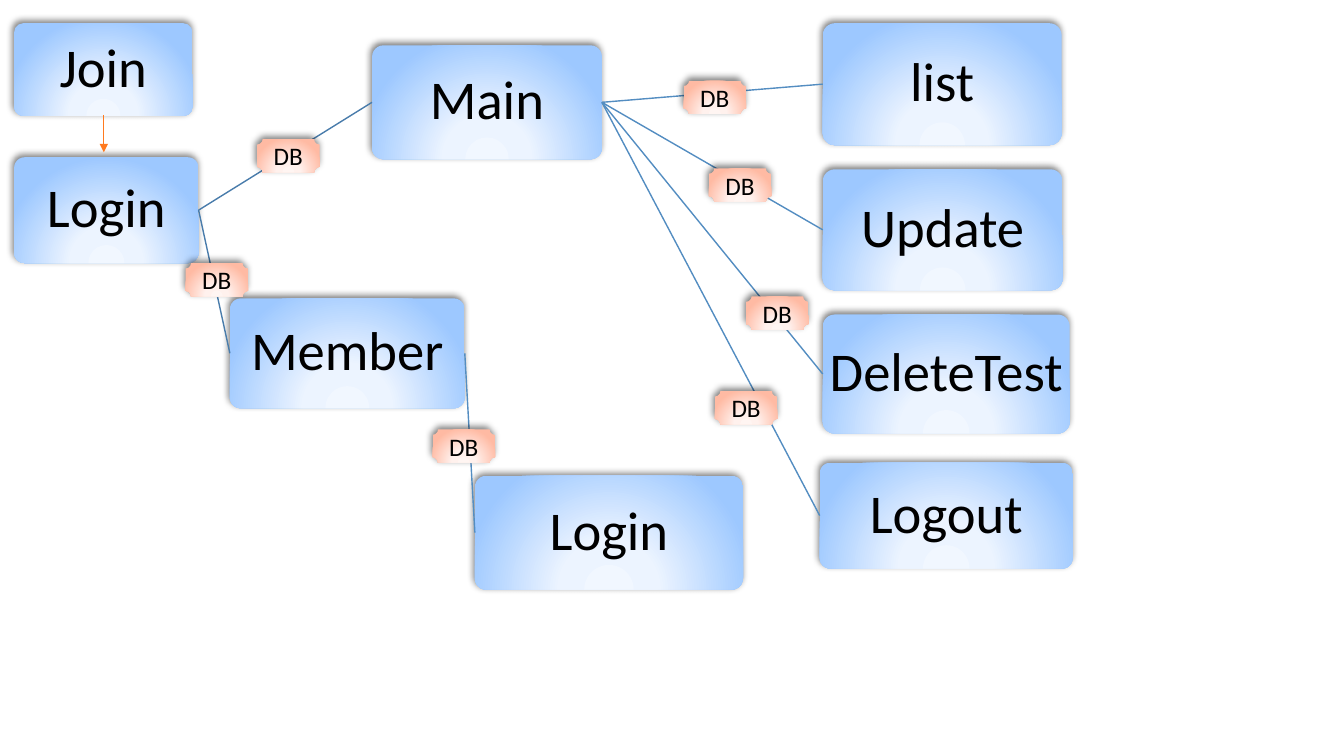
from lxml import etree
from pptx import Presentation
from pptx.dml.color import RGBColor
from pptx.enum.shapes import MSO_CONNECTOR, MSO_SHAPE
from pptx.enum.text import MSO_ANCHOR, PP_ALIGN
from pptx.oxml.ns import qn
from pptx.util import Inches, Pt

ROUND, PLAQUE = MSO_SHAPE.ROUNDED_RECTANGLE, MSO_SHAPE.PLAQUE
STRAIGHT = MSO_CONNECTOR.STRAIGHT
MIDDLE, CENTER = MSO_ANCHOR.MIDDLE, PP_ALIGN.CENTER
LEFT, RIGHT = 1, 3  # connection sites of a box

COLORS = {
    "text": "000000",
    "shade": "000000",
    "dark": "497CAB",
    "link": "538DC1",
    "arrow": "FF7A1F",
}
PAGE = ("F1F7FF", "ECF4FF", "9DC8FF")
STORE = ("FFF5F2", "FFF1ED", "FFBAA3")


def add(parent, tag, **attrs):
    return etree.SubElement(parent, qn(tag), {k: str(v) for k, v in attrs.items()})


def write(shape, text, size=18, font="Calibri", color="text", space=1.0):
    frame = shape.text_frame
    frame.word_wrap = False
    frame.vertical_anchor = MIDDLE
    frame.margin_left = frame.margin_right = 0
    frame.margin_top = frame.margin_bottom = 0
    para = frame.paragraphs[0]
    para.alignment = CENTER
    para.line_spacing = space
    run = para.add_run()
    run.text = text
    run.font.size = Pt(size)
    run.font.name = font
    run.font.color.rgb = RGBColor.from_string(COLORS[color])


class Board:
    def __init__(self, slide):
        self.slide = slide

    def block(self, kind, left, top, width, height, tones):
        """Add a shape with a glow from below and a soft shadow."""
        shape = self.slide.shapes.add_shape(
            kind, Inches(left), Inches(top), Inches(width), Inches(height))
        shape.line.fill.background()
        shape.shadow.inherit = False
        shape.fill.solid()
        props = shape._element.spPr

        # Radial gradient
        grad = etree.Element(qn("a:gradFill"), rotWithShape="1")
        stops = add(grad, "a:gsLst")
        for pos, tone in zip((0, 34, 100), tones):
            stop = add(stops, "a:gs", pos=pos * 1000)
            add(stop, "a:srgbClr", val=tone)
        way = add(grad, "a:path", path="circle")
        add(way, "a:fillToRect", l=50000, t=155000, r=50000, b=-55000)
        props.replace(props.find(qn("a:solidFill")), grad)

        # Soft shadow
        shade = add(props.find(qn("a:effectLst")), "a:outerShdw",
                    blurRad=Pt(5), dist=Pt(2), dir=245 * 60000, rotWithShape=0)
        color = add(shade, "a:srgbClr", val=COLORS["shade"])
        add(color, "a:alpha", val=50000)
        return shape

    def page(self, text, *place):
        shape = self.block(ROUND, *place, PAGE)
        shape.adjustments[0] = 0.1
        write(shape, text, size=39, space=0.9)
        return shape

    def store(self, left, top):
        write(self.block(PLAQUE, left, top, 0.62, 0.33, STORE), "DB")

    def line(self, color, width, start=(0, 0), end=(0, 0)):
        line = self.slide.shapes.add_connector(
            STRAIGHT, *map(Inches, start + end))
        line.line.color.rgb = RGBColor.from_string(COLORS[color])
        line.line.width = Pt(width)
        add(line._element.spPr, "a:effectLst")
        return line

    def link(self, source, target, color):
        line = self.line(color, 1)
        line.begin_connect(source, RIGHT)
        line.end_connect(target, LEFT)

    def arrow(self, start, end):
        line = self.line("arrow", 0.75, start, end)
        add(line.line._get_or_add_ln(), "a:tailEnd", type="triangle")


def main():
    deck = Presentation()
    deck.slide_width, deck.slide_height = Inches(13.33), Inches(7.5)
    board = Board(deck.slides.add_slide(deck.slide_layouts[6]))

    # Pages reached from the login
    login = board.page("Login", 0.14, 1.56, 1.83, 1.05)
    home = board.page("Main", 3.69, 0.45, 2.28, 1.13)
    member = board.page("Member", 2.28, 2.96, 2.33, 1.09)
    for target in (home, member):
        board.link(login, target, "dark")

    # Pages reached from the main page
    for text, *place in (
        ("list", 8.16, 0.23, 2.37, 1.21),
        ("Update", 8.16, 1.68, 2.38, 1.2),
        ("DeleteTest", 8.16, 3.12, 2.45, 1.18),
        ("Logout", 8.13, 4.59, 2.51, 1.05),
    ):
        board.link(home, board.page(text, *place), "link")

    # Second login and joining
    again = board.page("Login", 4.71, 4.72, 2.66, 1.13)
    board.link(member, again, "link")
    board.page("Join", 0.14, 0.23, 1.77, 0.92)
    board.arrow((1.03, 1.14), (1.03, 1.51))

    # Database tags on the links
    for spot in ((1.84, 2.61), (2.55, 1.38), (4.29, 4.26), (7.4, 2.94),
                 (6.78, 0.8), (7.03, 1.67), (7.09, 3.88)):
        board.store(*spot)

    deck.save("out.pptx")


if __name__ == "__main__":
    main()
